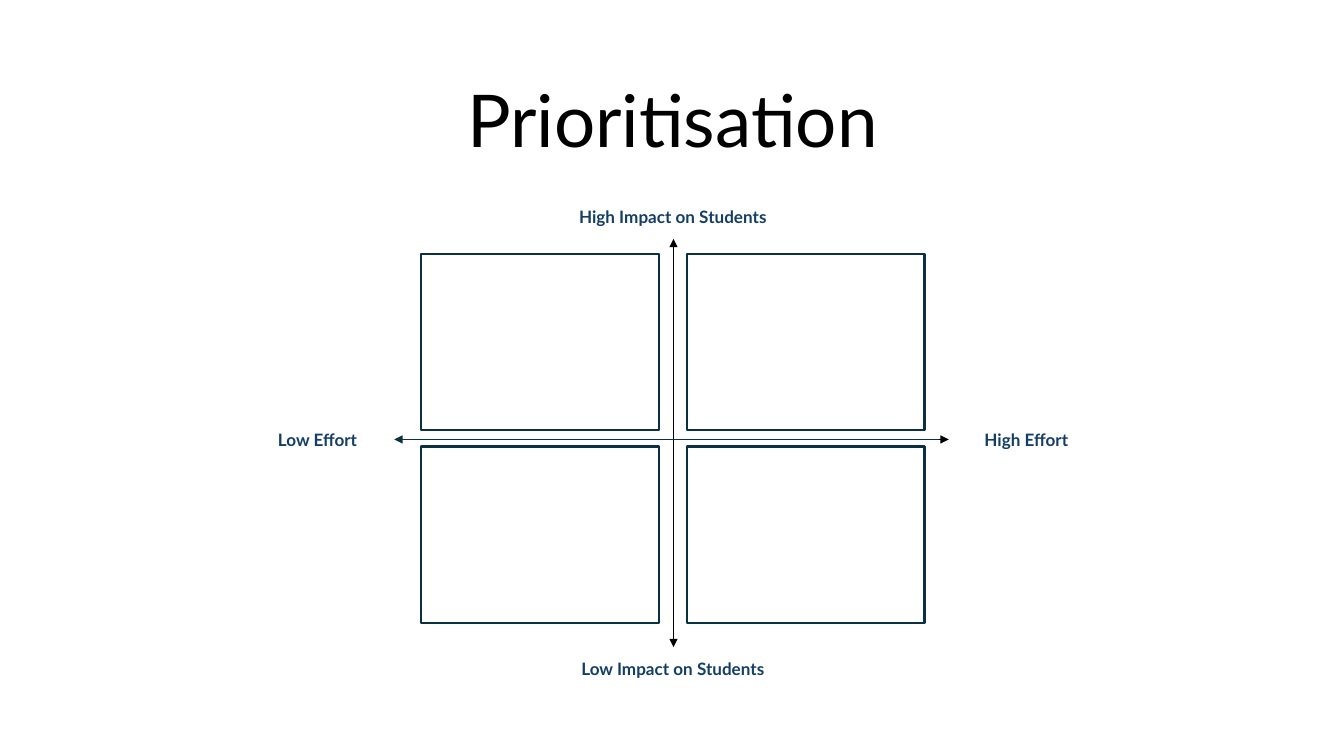
from lxml import etree
from pptx import Presentation
from pptx import util as u
from pptx.dml.color import RGBColor
from pptx.enum import shapes, text
from pptx.oxml.ns import qn

COLORS = {"black": "000000", "white": "FFFFFF", "label": "163E64", "frame": "0B3041"}

presentation = Presentation()
presentation.slide_width = u.Inches(13.33)
presentation.slide_height = u.Inches(7.5)
slide = presentation.slides.add_slide(presentation.slide_layouts[5])


def write(shape, wording, size, color, bold):
    frame = shape.text_frame
    frame.word_wrap = True
    frame.text = wording
    paragraph = frame.paragraphs[0]
    paragraph.alignment = text.PP_ALIGN.CENTER
    font = paragraph.runs[0].font
    font.name = "Lato"
    font.size = u.Pt(size)
    font.bold = bold
    font.color.rgb = RGBColor.from_string(COLORS[color])
    return paragraph


def add_box(left, top, width, height):
    shape = slide.shapes.add_shape(
        shapes.MSO_SHAPE.RECTANGLE, *map(u.Inches, (left, top, width, height)))
    shape.shadow.inherit = False
    shape.fill.solid()
    shape.fill.fore_color.rgb = RGBColor.from_string(COLORS["white"])
    shape.line.fill.background()
    return shape


title = slide.shapes.title
title.left, title.top, title.width, title.height = map(u.Inches, (0.92, 0.61, 11.5, 1.24))
title.text_frame.vertical_anchor = text.MSO_ANCHOR.MIDDLE
write(title, "Prioritisation", 52, "black", False).line_spacing = 0.9

axis_x, axis_y = 6.68, 4.36
labels = [
    ("High Impact on Students", 5.03, 2.0, 3.29),
    ("Low Impact on Students", 5.03, 6.48, 3.29),
    ("Low Effort", 2.42, 4.21, 1.46),
    ("High Effort", 9.45, 4.21, 1.46),
]
for wording, left, top, width in labels:
    label = add_box(left, top, width, 0.28)
    label.text_frame.vertical_anchor = text.MSO_ANCHOR.TOP
    paragraph = write(label, wording, 12.2, "label", True)
    paragraph.space_after = u.Pt(4.7)

cell_width, cell_height = 2.36, 1.75
column_step, row_step = 2.63, 1.91
for row in range(2):
    for column in range(2):
        quadrant = add_box(4.18 + column * column_step, 2.52 + row * row_step,
                           cell_width, cell_height)
        quadrant.line.color.rgb = RGBColor.from_string(COLORS["frame"])
        quadrant.line.width = u.Pt(1.5)

arrows = [
    (axis_x, 6.35, axis_x, 2.37, "black"),
    (axis_x, 2.56, axis_x, 6.42, "black"),
    (3.94, axis_y, 9.41, axis_y, "black"),
    (9.31, axis_y, 3.91, axis_y, "frame"),
]
for *ends, color in arrows:
    arrow = slide.shapes.add_connector(shapes.MSO_CONNECTOR.STRAIGHT, *map(u.Inches, ends))
    arrow.line.color.rgb = RGBColor.from_string(COLORS[color])
    arrow.line.width = u.Pt(1)
    etree.SubElement(arrow.line._get_or_add_ln(), qn("a:tailEnd"), type="triangle")
    etree.SubElement(arrow._element.spPr, qn("a:effectLst"))

presentation.save("out.pptx")
